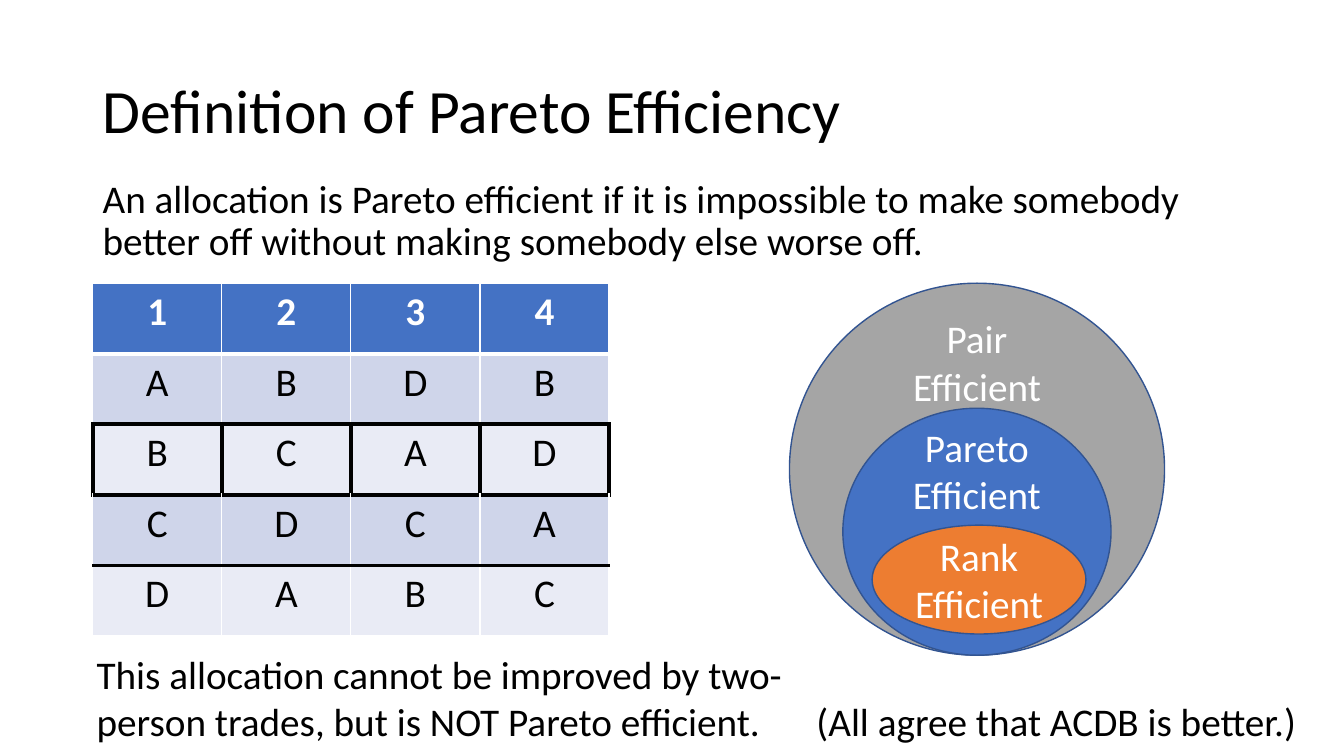
from lxml import etree
from pptx import Presentation
from pptx.dml.color import RGBColor
from pptx.enum.shapes import MSO_SHAPE
from pptx.enum.text import MSO_ANCHOR, PP_ALIGN
from pptx.oxml.ns import qn
from pptx.util import Pt

PX = 9144  # 100 px to the inch
ELLIPSE = MSO_SHAPE.OVAL
TOP, MIDDLE = MSO_ANCHOR.TOP, MSO_ANCHOR.MIDDLE
LEFT, CENTER = PP_ALIGN.LEFT, PP_ALIGN.CENTER

BLACK = RGBColor(0x00, 0x00, 0x00)
WHITE = RGBColor(0xFF, 0xFF, 0xFF)
GRAY = RGBColor(0xA5, 0xA5, 0xA5)
BLUE = RGBColor(0x44, 0x72, 0xC4)
ORANGE = RGBColor(0xED, 0x7D, 0x31)
OUTLINE = RGBColor(0x32, 0x54, 0x91)
BAND_DARK = RGBColor(0xCF, 0xD5, 0xEA)
BAND_LIGHT = RGBColor(0xE9, 0xEB, 0xF5)


def write(frame, text, color, size=28, align=LEFT, bold=False):
    """Fill a text frame, one paragraph per line of text."""
    frame.word_wrap = True
    frame.text = text
    for para in frame.paragraphs:
        para.alignment = align
        para.font.name = "Calibri"
        para.font.size = Pt(size)
        para.font.bold = bold
        para.font.color.rgb = color


def set_borders(cell, borders):
    """Draw the left, right, top and bottom borders, in that order."""
    properties = cell._tc.get_or_add_tcPr()
    for place, (side, (color, width)) in enumerate(zip("LRTB", borders)):
        line = etree.Element(qn(f"a:ln{side}"), w=str(Pt(width)))
        fill = etree.SubElement(line, qn("a:solidFill"))
        etree.SubElement(fill, qn("a:srgbClr"), val=str(color))
        properties.insert(place, line)


deck = Presentation()
deck.slide_width, deck.slide_height = 1333 * PX, 750 * PX
page = deck.slides.add_slide(deck.slide_layouts[6])

# Nested efficiency sets: the bottom inset lifts each label above the inner set
SETS = [
    ("Pair\nEfficient", GRAY, (783, 281, 372, 369), 0, 213),
    ("Pareto Efficient", BLUE, (836, 405, 266, 245), 0, 122),
    ("Rank Efficient", ORANGE, (865, 521, 212, 108), 5, 5),
]
for label, color, place, inset_top, inset_bottom in SETS:
    ellipse = page.shapes.add_shape(ELLIPSE, *(n * PX for n in place))
    ellipse.shadow.inherit = False
    ellipse.fill.solid()
    ellipse.fill.fore_color.rgb = color
    ellipse.line.color.rgb = OUTLINE
    ellipse.line.width = Pt(1)
    frame = ellipse.text_frame
    frame.vertical_anchor = MIDDLE
    frame.margin_top, frame.margin_bottom = inset_top * PX, inset_bottom * PX
    write(frame, label, WHITE, align=CENTER)

# Title, definition and remarks
TEXTS = [
    ("Definition of Pareto Efficiency", (92, 40, 1150, 145), 44, MIDDLE, 0.9, 0),
    ("An allocation is Pareto efficient if it is impossible to make somebody "
     "better off without making somebody else worse off.",
     (92, 173, 1150, 145), 28, TOP, 0.9, 10),
    ("This allocation cannot be improved by two-person trades, "
     "but is NOT Pareto efficient.", (86, 640, 750, 104), 28, TOP, 1.0, 0),
    ("(All agree that ACDB is better.)", (800, 687, 533, 57), 28, TOP, 1.0, 0),
]
for text, place, size, anchor, spacing, space_before in TEXTS:
    box = page.shapes.add_textbox(*(n * PX for n in place))
    box.text_frame.vertical_anchor = anchor
    write(box.text_frame, text, BLACK, size)
    para = box.text_frame.paragraphs[0]
    para.line_spacing = spacing
    para.space_before = Pt(space_before)

# Preference table: one column per person, allocation row outlined
PREFERENCES = ["1234", "ABDB", "BCAD", "CDCA", "DABC"]
ALLOCATION_ROW = 2
THIN, THICK, STRONG = (WHITE, 1), (WHITE, 3), (BLACK, 3)
ROW_EDGES = [THIN, THICK, STRONG, STRONG, STRONG, THIN]

table = page.shapes.add_table(
    5, 4, 92 * PX, 281 * PX, 512 * PX, 350 * PX).table
for column in table.columns:
    column.width = 128 * PX
for r, letters in enumerate(PREFERENCES):
    table.rows[r].height = 70 * PX
    header = r == 0
    side = STRONG if r == ALLOCATION_ROW else THIN
    for c, letter in enumerate(letters):
        cell = table.cell(r, c)
        cell.fill.solid()
        cell.fill.fore_color.rgb = (
            BLUE if header else BAND_DARK if r % 2 else BAND_LIGHT)
        write(cell.text_frame, letter, WHITE if header else BLACK,
              align=CENTER, bold=header)
        set_borders(cell, [side, side, ROW_EDGES[r], ROW_EDGES[r + 1]])

deck.save("out.pptx")
